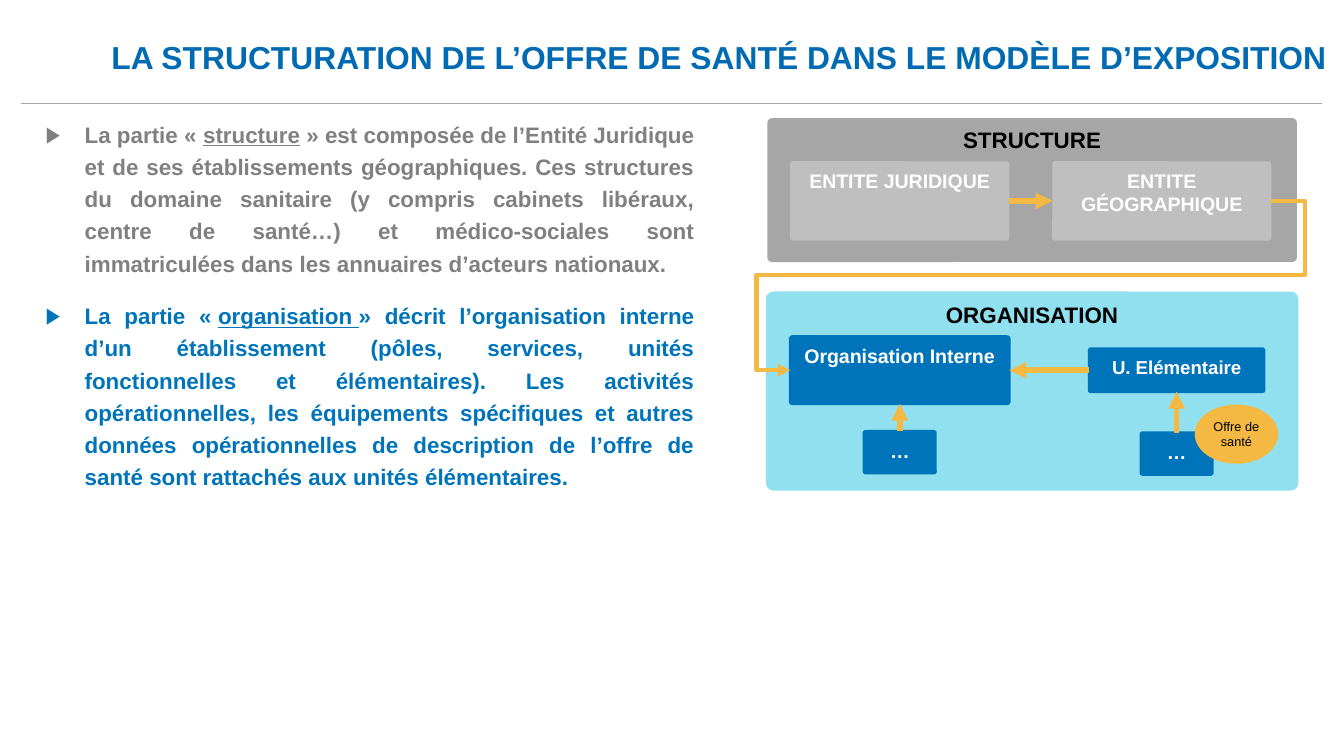
import lxml.etree
import pptx
import pptx.dml.color
import pptx.enum.shapes
import pptx.enum.text
import pptx.oxml.ns
import pptx.util

COLUMNS, ROWS = 100, 56.25
SLIDE_WIDTH = pptx.util.Inches(10)
SLIDE_HEIGHT = SLIDE_WIDTH * 9 // 16
COLORS = {
    "title": "006AB2", "blue": "0074BA", "gray": "808080", "rule": "A6A6A6",
    "silver": "BFBFBF", "cyan": "90E0EF", "amber": "F4B942",
    "white": "FFFFFF", "black": "000000",
}
ALIGN = pptx.enum.text.PP_ALIGN
ANCHOR = pptx.enum.text.MSO_ANCHOR
SHAPE = pptx.enum.shapes.MSO_SHAPE
CONNECTOR = pptx.enum.shapes.MSO_CONNECTOR
NO_BREAK_SPACE = chr(160)

LEFT_COLUMN, RIGHT_COLUMN = 58.8, 78.3
PANEL_LEFT, PANEL_WIDTH = 57.1, 39.4
BOX_WIDTH = 16.3
LEFT_CENTER, RIGHT_CENTER = 66.95, 87.55
SMALL_WIDTH, SMALL_HEIGHT = 5.3, 3.1
STRUCTURE_ROW, ORGANISATION_ROW = 14.95, 27.55


def rgb(name):
    return pptx.dml.color.RGBColor.from_string(COLORS[name])


def x(columns):
    return round(SLIDE_WIDTH * columns / COLUMNS)


def y(rows):
    return round(SLIDE_HEIGHT * rows / ROWS)


def place(left, top, width, height):
    return x(left), y(top), x(width), y(height)


def child(parent, tag, **attributes):
    return lxml.etree.SubElement(parent, pptx.oxml.ns.qn(tag), attributes)


def add_bullet(paragraph, color):
    properties = paragraph._p.get_or_add_pPr()
    properties.set("marL", str(pptx.util.Inches(0.39)))
    properties.set("indent", str(pptx.util.Inches(-0.29)))
    child(child(properties, "a:buClr"), "a:srgbClr", val=COLORS[color])
    child(properties, "a:buFont", typeface="Arial")
    child(properties, "a:buChar", char="▶")


def write_text(shape, runs, size, color, bold=True, align=ALIGN.CENTER, anchor=ANCHOR.TOP,
               insets=(0, 0), spacing=None, bullet=False, wrap=True):
    frame = shape.text_frame
    frame.word_wrap = wrap
    frame.vertical_anchor = anchor
    frame.margin_left = frame.margin_right = pptx.util.Inches(insets[0])
    frame.margin_top = frame.margin_bottom = pptx.util.Inches(insets[1])
    paragraph = frame.paragraphs[0]
    if bullet:
        add_bullet(paragraph, color)
    paragraph.alignment = align
    paragraph.line_spacing = spacing
    for text, underline in runs:
        run = paragraph.add_run()
        run.text = text
        run.font.name = "Arial"
        run.font.size = pptx.util.Pt(size)
        run.font.bold = bold
        run.font.underline = underline
        run.font.color.rgb = rgb(color)


def add_text(slide, area, runs, **style):
    write_text(slide.shapes.add_textbox(*place(*area)), runs, **style)


def add_box(slide, area, text, fill, outline=False, kind=SHAPE.ROUNDED_RECTANGLE,
            rounding=0.036, size=10.5, color="white", **style):
    shape = slide.shapes.add_shape(kind, *place(*area))
    shape.shadow.inherit = False
    if kind == SHAPE.ROUNDED_RECTANGLE:
        shape.adjustments[0] = rounding
    shape.fill.solid()
    shape.fill.fore_color.rgb = rgb(fill)
    if outline:
        shape.line.color.rgb = rgb(fill)
        shape.line.width = pptx.util.Pt(1.5)
    else:
        shape.line.fill.background()
    style.setdefault("insets", (0.05, 0.05))
    write_text(shape, [(text, False)], size=size, color=color, **style)


def add_line(slide, start, end, color="amber", width=3, arrow=True, bends=()):
    kind = CONNECTOR.ELBOW if bends else CONNECTOR.STRAIGHT
    connector = slide.shapes.add_connector(
        kind, x(start[0]), y(start[1]), x(end[0]), y(end[1]))
    connector.line.color.rgb = rgb(color)
    connector.line.width = pptx.util.Pt(width)
    properties = connector._element.spPr
    if arrow:
        child(connector.line._get_or_add_ln(), "a:tailEnd", type="triangle")
    child(properties, "a:effectLst")
    if bends:
        geometry = properties.find(pptx.oxml.ns.qn("a:prstGeom"))
        geometry.set("prst", "bentConnector5")
        guides = geometry.get_or_add_avLst()
        for number, share in enumerate(bends, 1):
            child(guides, "a:gd", name=f"adj{number}", fmla=f"val {round(share * 100000)}")


def add_structure(slide):
    add_box(slide, (PANEL_LEFT, 8.8, PANEL_WIDTH, 10.7), "STRUCTURE", "rule",
            rounding=0.031, size=12, color="black")
    for left, name in ((LEFT_COLUMN, "ENTITE JURIDIQUE"), (RIGHT_COLUMN, "ENTITE GÉOGRAPHIQUE")):
        add_box(slide, (left, 12, BOX_WIDTH, 5.9), name, "silver")
    add_line(slide, (LEFT_COLUMN + BOX_WIDTH, STRUCTURE_ROW), (RIGHT_COLUMN, STRUCTURE_ROW))


def add_organisation(slide):
    add_box(slide, (PANEL_LEFT, 21.8, PANEL_WIDTH, 14.6), "ORGANISATION", "cyan",
            outline=True, rounding=0.031, size=12, color="black")
    add_box(slide, (LEFT_COLUMN, 25.05, BOX_WIDTH, 5), "Organisation Interne", "blue", outline=True)
    add_box(slide, (81.05, 25.95, 13, 3.2), "U. Elémentaire", "blue", outline=True, size=10)
    add_line(slide, (81.05, ORGANISATION_ROW), (LEFT_COLUMN + BOX_WIDTH, ORGANISATION_ROW))
    for center, top, target in ((RIGHT_CENTER, 32.2, 29.15), (LEFT_CENTER, 32.1, 30.05)):
        add_box(slide, (center - SMALL_WIDTH / 2, top, SMALL_WIDTH, SMALL_HEIGHT),
                "…", "blue", outline=True)
        add_line(slide, (center, top), (center, target))
    add_box(slide, (89, 30.2, 6, 4.2), "Offre de santé", "amber", outline=True,
            kind=SHAPE.OVAL, size=6.8, color="black", bold=False,
            anchor=ANCHOR.MIDDLE, insets=(0, 0))


def add_descriptions(slide):
    descriptions = (
        (8.6, 18.2, "gray", "La partie « ", "structure",
         f"{NO_BREAK_SPACE}» est composée de l’Entité Juridique et de ses établissements "
         "géographiques. Ces structures du domaine sanitaire (y compris cabinets libéraux, "
         "centre de santé…) et médico-sociales sont immatriculées dans les annuaires "
         "d’acteurs nationaux."),
        (22.1, 11.5, "blue", f"La partie «{NO_BREAK_SPACE}", f"organisation{NO_BREAK_SPACE}",
         "» décrit l’organisation interne d’un établissement (pôles, services, unités "
         "fonctionnelles et élémentaires). Les activités opérationnelles, les équipements "
         "spécifiques et autres données opérationnelles de description de l’offre de santé "
         "sont rattachés aux unités élémentaires."),
    )
    for top, height, color, opening, term, rest in descriptions:
        add_text(slide, (2.4, top, 49.3, height),
                 [(opening, False), (term, True), (rest, False)],
                 size=12, color=color, align=ALIGN.JUSTIFY, spacing=1.2, bullet=True)


def main():
    presentation = pptx.Presentation()
    presentation.slide_width, presentation.slide_height = SLIDE_WIDTH, SLIDE_HEIGHT
    slide = presentation.slides.add_slide(presentation.slide_layouts[6])
    add_line(slide, (1.6, 7.7), (98.4, 7.7), color="rule", width=0.25, arrow=False)
    add_structure(slide)
    add_organisation(slide)
    add_line(slide, (RIGHT_COLUMN + BOX_WIDTH, STRUCTURE_ROW), (LEFT_COLUMN, ORGANISATION_ROW),
             width=2.25, bends=(-0.07, 0.44, 1.07))
    add_text(slide, (8.3, 0.9, 90.6, 4.8),
             [("LA STRUCTURATION DE L’OFFRE DE SANTÉ DANS LE MODÈLE D’EXPOSITION", False)],
             size=17, color="title", align=ALIGN.LEFT, anchor=ANCHOR.BOTTOM,
             spacing=0.9, wrap=False)
    add_descriptions(slide)
    presentation.save("out.pptx")


if __name__ == "__main__":
    main()
